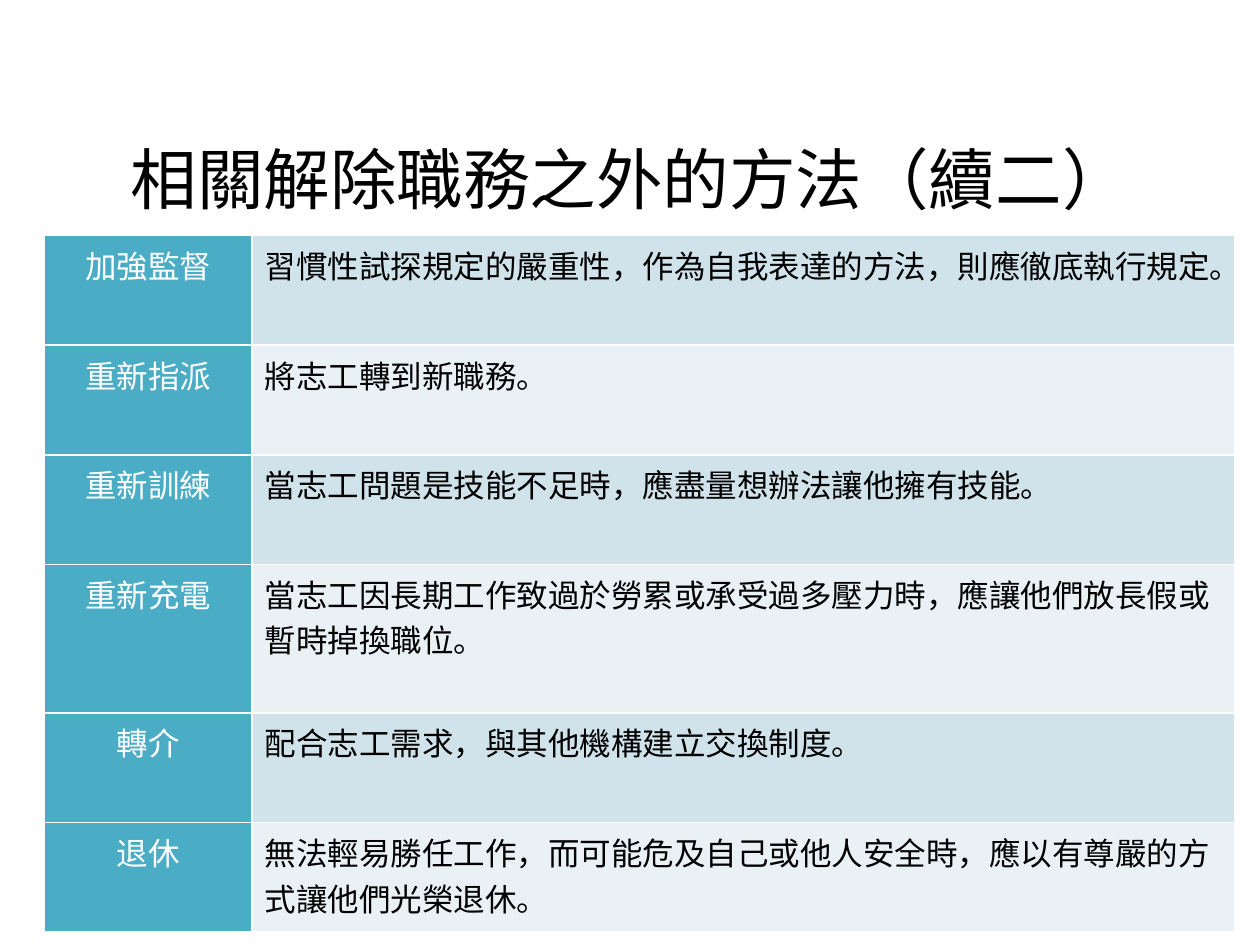
import pptx
import pptx.dml.color
import pptx.enum.text
import pptx.oxml
import pptx.oxml.ns
import pptx.util

FONT = "Noto Sans CJK SC"
LABEL_FILL = "4BACC6"
BAND_FILLS = ("D0E3EA", "E9F1F5")
COLUMN_WIDTHS = (1.65, 7.8)
ROW_HEIGHT = 0.87
TALL_ROW, TALL_HEIGHT = 3, 1.18
CENTER = pptx.enum.text.PP_ALIGN.CENTER
LEFT = pptx.enum.text.PP_ALIGN.LEFT

METHODS = [
    ("加強監督", "習慣性試探規定的嚴重性，作為自我表達的方法，則應徹底執行規定。"),
    ("重新指派", "將志工轉到新職務。"),
    ("重新訓練", "當志工問題是技能不足時，應盡量想辦法讓他擁有技能。"),
    ("重新充電", "當志工因長期工作致過於勞累或承受過多壓力時，應讓他們放長假或暫時掉換職位。"),
    ("轉介", "配合志工需求，與其他機構建立交換制度。"),
    ("退休", "無法輕易勝任工作，而可能危及自己或他人安全時，應以有尊嚴的方式讓他們光榮退休。"),
]


def color(value):
    return pptx.dml.color.RGBColor.from_string(value)


def inches(*values):
    return [pptx.util.Inches(value) for value in values]


def write(text_frame, text, size, text_color, alignment):
    text_frame.text = text
    paragraph = text_frame.paragraphs[0]
    paragraph.alignment = alignment
    for run in paragraph.runs:
        run.font.size = pptx.util.Pt(size)
        run.font.bold = False
        run.font.name = FONT
        run.font.color.rgb = color(text_color)
        # East Asian text takes its typeface from a:ea
        east_asian = pptx.oxml.parse_xml(
            f'<a:ea {pptx.oxml.ns.nsdecls("a")} typeface="{FONT}"/>')
        run.font._element.find(pptx.oxml.ns.qn("a:latin")).addnext(east_asian)


def add_borders(cell, line_color, points):
    properties = cell._tc.get_or_add_tcPr()
    for index, side in enumerate(("lnL", "lnR", "lnT", "lnB")):
        properties.insert(index, pptx.oxml.parse_xml(
            f'<a:{side} {pptx.oxml.ns.nsdecls("a")} w="{pptx.util.Pt(points)}">'
            f'<a:solidFill><a:srgbClr val="{line_color}"/></a:solidFill></a:{side}>'))


def fill_cell(cell, text, fill, text_color, alignment):
    cell.fill.solid()
    cell.fill.fore_color.rgb = color(fill)
    write(cell.text_frame, text, 18, text_color, alignment)
    add_borders(cell, "FFFFFF", 1)


def add_title(slide, text):
    title = slide.shapes.title
    title.left, title.top, title.width, title.height = inches(0.5, 0.79, 9, 1.25)
    title.text_frame.vertical_anchor = pptx.enum.text.MSO_ANCHOR.MIDDLE
    write(title.text_frame, text, 38, "000000", CENTER)


def add_method_table(slide):
    heights = [TALL_HEIGHT if index == TALL_ROW else ROW_HEIGHT
               for index in range(len(METHODS))]
    frame = slide.shapes.add_table(
        len(METHODS), len(COLUMN_WIDTHS),
        *inches(0.35, 1.87, sum(COLUMN_WIDTHS), sum(heights)))
    table = frame.table
    for column, width in zip(table.columns, COLUMN_WIDTHS):
        column.width = pptx.util.Inches(width)
    for index, (label, description) in enumerate(METHODS):
        table.rows[index].height = pptx.util.Inches(heights[index])
        fill_cell(table.cell(index, 0), label, LABEL_FILL, "FFFFFF", CENTER)
        fill_cell(table.cell(index, 1), description,
                  BAND_FILLS[index % 2], "000000", LEFT)


def main():
    presentation = pptx.Presentation()
    presentation.slide_width, presentation.slide_height = inches(10, 7.5)
    # Title Only layout
    slide = presentation.slides.add_slide(presentation.slide_layouts[5])
    add_title(slide, "相關解除職務之外的方法（續二）")
    add_method_table(slide)
    presentation.save("out.pptx")


if __name__ == "__main__":
    main()
